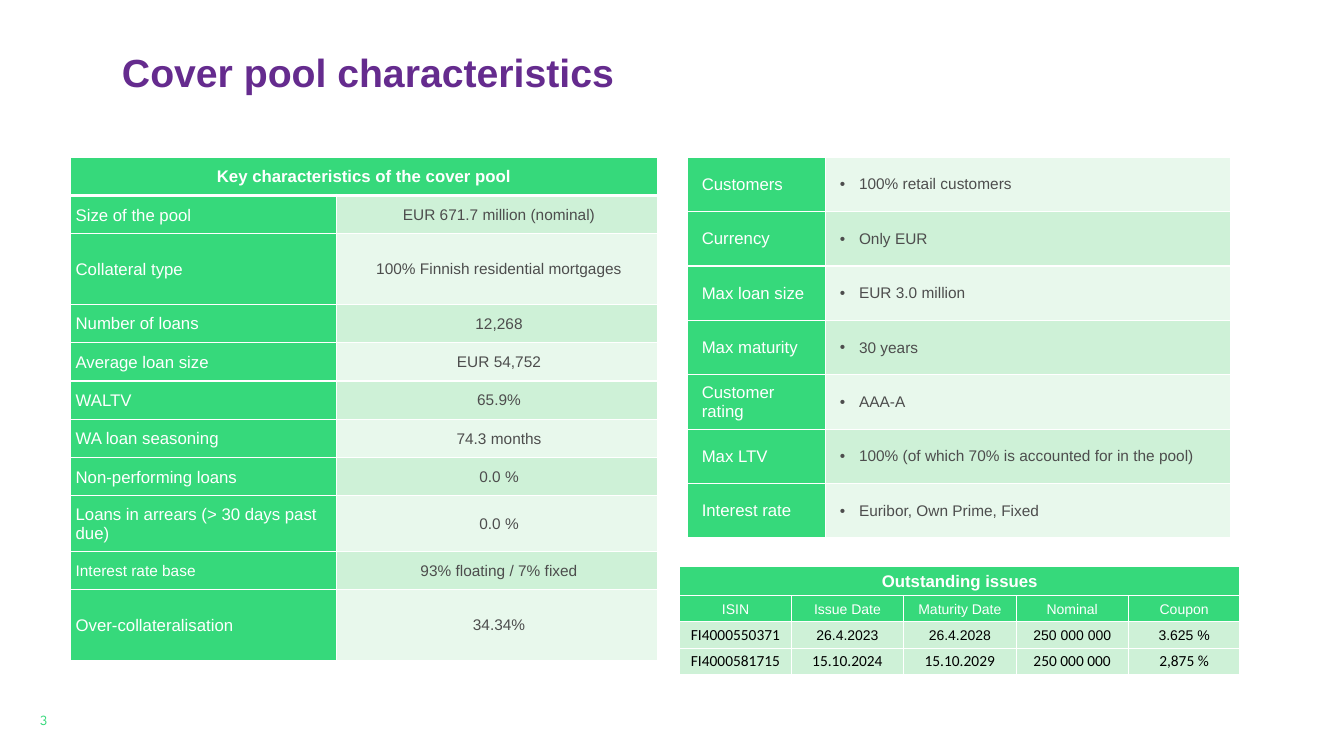
from dataclasses import dataclass

from lxml.etree import SubElement
from pptx import Presentation
from pptx.dml.color import RGBColor
from pptx.enum.text import MSO_ANCHOR, PP_ALIGN
from pptx.oxml.ns import qn
from pptx.util import Inches, Pt

WHITE = RGBColor(0xFF, 0xFF, 0xFF)
BLACK = RGBColor(0x00, 0x00, 0x00)
GREY = RGBColor(0x4D, 0x4D, 0x4D)
PURPLE = RGBColor(0x65, 0x2B, 0x8E)
GREEN = RGBColor(0x36, 0xD9, 0x7B)
MINT = RGBColor(0xCE, 0xF1, 0xD7)
PALE = RGBColor(0xE8, 0xF8, 0xEC)


@dataclass(frozen=True)
class CellStyle:
    fill: RGBColor
    color: RGBColor = WHITE
    size: int = 12
    font: str = "Arial"
    bold: bool = False
    align: PP_ALIGN = PP_ALIGN.LEFT
    indent: float = 0
    hanging: float = 0
    tight: bool = True
    bottom: float = 1


@dataclass(frozen=True)
class Grid:
    left: float
    top: float
    cols: list[float]
    rows: list[float]


POOL = [
    ("Size of the pool", "EUR 671.7 million (nominal)", 0.38),
    ("Collateral type", "100% Finnish residential mortgages", 0.7),
    ("Number of loans", "12,268", 0.38),
    ("Average loan size", "EUR 54,752", 0.38),
    ("WALTV", "65.9%", 0.38),
    ("WA loan seasoning", "74.3 months", 0.38),
    ("Non-performing loans", "0.0 %", 0.38),
    ("Loans in arrears (> 30 days past due)", "0.0 %", 0.55),
    ("Interest rate base", "93% floating / 7% fixed", 0.38),
    ("Over-collateralisation", "34.34%", 0.7),
]
CRITERIA = [
    ("Customers", "100% retail customers"),
    ("Currency", "Only EUR"),
    ("Max loan size", "EUR 3.0 million"),
    ("Max maturity", "30 years"),
    ("Customer rating", "AAA-A"),
    ("Max LTV", "100% (of which 70% is accounted for in the pool)"),
    ("Interest rate", "Euribor, Own Prime, Fixed"),
]
ISSUE_FIELDS = ["ISIN", "Issue Date", "Maturity Date", "Nominal", "Coupon"]
ISSUES = [
    ["FI4000550371", "26.4.2023", "26.4.2028", "250 000 000", "3.625 %"],
    ["FI4000581715", "15.10.2024", "15.10.2029", "250 000 000", "2,875 %"],
]


def add_grid(s, grid: Grid):
    tbl = s.shapes.add_table(
        len(grid.rows), len(grid.cols), Inches(grid.left), Inches(grid.top),
        Inches(sum(grid.cols)), Inches(sum(grid.rows))).table
    tbl.first_row = tbl.horz_banding = False
    for column, width in zip(tbl.columns, grid.cols):
        column.width = Inches(width)
    for row, height in zip(tbl.rows, grid.rows):
        row.height = Inches(height)
    return tbl


def set_borders(cell, bottom: float) -> None:
    tc_pr = cell._tc.get_or_add_tcPr()
    for side, width in (("L", 1), ("R", 1), ("T", 1), ("B", bottom)):
        line = SubElement(tc_pr, qn(f"a:ln{side}"), w=str(Pt(width)))
        fill = SubElement(line, qn("a:solidFill"))
        SubElement(fill, qn("a:srgbClr"), val=str(WHITE))


def fill_cell(cell, text: str, style: CellStyle) -> None:
    set_borders(cell, style.bottom)
    cell.fill.solid()
    cell.fill.fore_color.rgb = style.fill
    cell.vertical_anchor = MSO_ANCHOR.MIDDLE
    if style.tight:
        cell.margin_left = cell.margin_right = cell.margin_top = Inches(0.01)
        cell.margin_bottom = 0
    cell.text = text
    p = cell.text_frame.paragraphs[0]
    p.alignment = style.align
    p_pr = p._p.get_or_add_pPr()
    p_pr.set("marL", str(Inches(style.indent)))
    p_pr.set("indent", str(-Inches(style.hanging)))
    if style.hanging:
        SubElement(p_pr, qn("a:buFont"), typeface="Arial")
        SubElement(p_pr, qn("a:buChar"), char="•")
    set_font(p, style.font, style.size, style.color, style.bold)


def set_font(p, name: str, size: int, color: RGBColor, bold: bool = False) -> None:
    p.font.name = name
    p.font.size = Pt(size)
    p.font.bold = bold
    p.font.color.rgb = color


def add_heading(tbl, text: str, bottom: float = 1) -> None:
    style = CellStyle(GREEN, bold=True, align=PP_ALIGN.CENTER, bottom=bottom)
    last = len(tbl.columns) - 1
    tbl.cell(0, 0).merge(tbl.cell(0, last))
    for col in range(last + 1):
        fill_cell(tbl.cell(0, col), "" if col else text, style)


def add_pool(s) -> None:
    heights = [0.38] + [height for _, _, height in POOL]
    tbl = add_grid(s, Grid(0.7, 1.56, [2.64, 3.18], heights))
    add_heading(tbl, "Key characteristics of the cover pool", bottom=3)
    for i, (label, value, _) in enumerate(POOL):
        size = 11 if label == "Interest rate base" else 12
        fill_cell(tbl.cell(i + 1, 0), label,
                  CellStyle(GREEN, size=size, indent=0.04))
        fill_cell(tbl.cell(i + 1, 1), value,
                  CellStyle(PALE if i % 2 else MINT, GREY, 11,
                            align=PP_ALIGN.CENTER, indent=0.04))


def add_criteria(s) -> None:
    tbl = add_grid(s, Grid(6.82, 1.56, [1.37, 4.02], [0.54] * len(CRITERIA)))
    for i, (label, value) in enumerate(CRITERIA):
        fill_cell(tbl.cell(i, 0), label,
                  CellStyle(GREEN, indent=0.04, tight=False))
        fill_cell(tbl.cell(i, 1), value,
                  CellStyle(MINT if i % 2 else PALE, GREY, 11,
                            indent=0.23, hanging=0.19, tight=False))


def add_issues(s) -> None:
    tbl = add_grid(s, Grid(6.74, 5.62, [1.11, 1.11, 1.12, 1.11, 1.11],
                           [0.29, 0.26, 0.26, 0.26]))
    add_heading(tbl, "Outstanding issues")
    center = PP_ALIGN.CENTER
    field = CellStyle(GREEN, size=10, align=center)
    plain = CellStyle(MINT, BLACK, 10, align=center)
    calibri = CellStyle(MINT, BLACK, 11, "Calibri", align=center)
    styles = [[field] * 5, [calibri] + [plain] * 4, [calibri] * 5]
    for i, texts in enumerate([ISSUE_FIELDS, *ISSUES]):
        for j, text in enumerate(texts):
            fill_cell(tbl.cell(i + 1, j), text, styles[i][j])


def add_title(s) -> None:
    title = s.shapes.title
    title.left, title.top = Inches(1.11), Inches(0.37)
    title.width, title.height = Inches(11.11), Inches(0.74)
    tf = title.text_frame
    tf.text = "Cover pool characteristics"
    tf.vertical_anchor = MSO_ANCHOR.MIDDLE
    p = tf.paragraphs[0]
    p.alignment = PP_ALIGN.LEFT
    p.line_spacing = 0.9
    set_font(p, "Arial", 28, PURPLE, True)


def add_page_number(s) -> None:
    sp = s.shapes.add_textbox(Inches(0.3), Inches(6.98), Inches(0.39), Inches(0.32))
    tf = sp.text_frame
    tf.word_wrap = True
    tf.vertical_anchor = MSO_ANCHOR.MIDDLE
    tf.text = "3"
    set_font(tf.paragraphs[0], "League Spartan", 10, GREEN)


def main() -> None:
    prs = Presentation()
    prs.slide_width, prs.slide_height = Inches(13.33), Inches(7.5)
    s = prs.slides.add_slide(prs.slide_layouts[5])
    add_title(s)
    add_page_number(s)
    add_criteria(s)
    add_pool(s)
    add_issues(s)
    prs.save("out.pptx")


if __name__ == "__main__":
    main()
